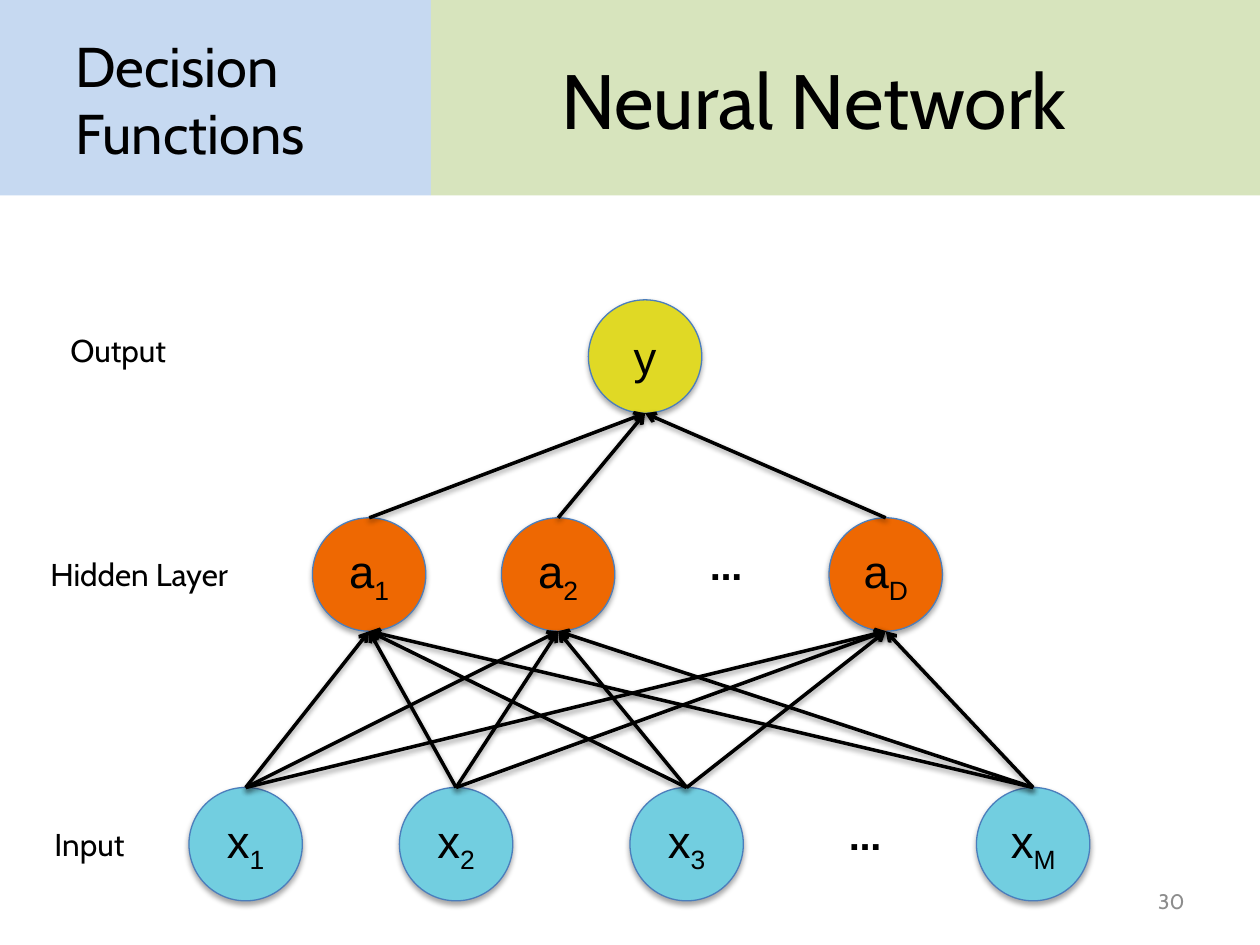
from lxml.etree import SubElement
from pptx import Presentation
from pptx.dml.color import RGBColor
from pptx.enum.shapes import MSO_CONNECTOR as Line, MSO_SHAPE as Shape
from pptx.enum.text import MSO_ANCHOR as Anchor, PP_ALIGN as Align
from pptx.oxml.ns import qn
from pptx.util import Inches, Pt

# The slide is a grid of 100 columns by 75 rows
WIDE, HIGH = 100, 75
UNIT = Inches(0.1)
NODE = 9
BLACK = "000000"


def grid(*nums):
    return [round(n * UNIT) for n in nums]


def color(code):
    return RGBColor.from_string(code)


def paint(shape, code):
    shape.fill.solid()
    shape.fill.fore_color.rgb = color(code)


def style(para, size, font="Cabin", code=BLACK, align=Align.LEFT, bold=False):
    para.alignment = align
    para.font.name, para.font.size = font, Pt(size)
    para.font.color.rgb = color(code)
    para.font.bold = bold


def shade(shape, alpha, dist):
    """Cast a soft shadow straight down."""
    props = shape._element.spPr
    list_ = SubElement(props, qn("a:effectLst"))
    outer = SubElement(list_, qn("a:outerShdw"), blurRad="40000",
                       dist=str(dist), dir="5400000", rotWithShape="0")
    tint = SubElement(outer, qn("a:srgbClr"), val=BLACK)
    SubElement(tint, qn("a:alpha"), val=str(alpha * 1000))


def write(slide, box, text, size, anchor=Anchor.MIDDLE, **look):
    frame = slide.shapes.add_textbox(*grid(*box)).text_frame
    frame.word_wrap = True
    frame.vertical_anchor = anchor
    para = frame.paragraphs[0]
    para.text = text
    style(para, size, **look)


def band(slide, box, code):
    shape = slide.shapes.add_shape(Shape.RECTANGLE, *grid(*box))
    shape.shadow.inherit = False
    paint(shape, code)
    shape.line.fill.background()


def header(slide, box):
    x, y, w, h = box
    split, edge, pad = 34.2, 5, 1.6
    band(slide, (x, y, split, h), "C6D9F1")
    band(slide, (x + split, y, w - split, h), "D7E4BD")
    deep = h - 3
    write(slide, (x + split, y + pad, w - split - edge, deep),
          "Neural Network", 44, align=Align.CENTER)
    write(slide, (x + edge, y + pad, split - edge, deep),
          "Decision Functions", 32)


def node(slide, mid, top, name, sub, code):
    shape = slide.shapes.add_shape(
        Shape.FLOWCHART_CONNECTOR, *grid(mid - NODE / 2, top, NODE, NODE))
    paint(shape, code)
    shape.line.color.rgb = color("4B7EBC")
    shape.line.width = Pt(0.75)
    shade(shape, 35, 23000)
    frame = shape.text_frame
    frame.word_wrap = False
    frame.vertical_anchor = Anchor.MIDDLE
    para = frame.paragraphs[0]
    para.add_run().text = name
    if sub:
        run = para.add_run()
        run.text = sub
        run.font._element.set("baseline", "-25000")
    style(para, 26, font="Arial", align=Align.CENTER)


def arrow(slide, tip, tail):
    link = slide.shapes.add_connector(Line.STRAIGHT, *grid(*tip, *tail))
    link.line.color.rgb = color(BLACK)
    link.line.width = Pt(2)
    SubElement(link.line._get_or_add_ln(), qn("a:headEnd"), type="arrow")
    shade(link, 38, 20000)


def network(slide, box):
    x, y, w, h = box
    # Layers: top row, fill, letter, node centres by subscript, gap centre
    layers = [
        (8.3, "E0D925", "y", {"": 51.2}, None),
        (25.6, "EE6802", "a", {"1": 29.3, "2": 44.3, "D": 70.3}, 57.7),
        (47, "72CEE0", "x",
         {"1": 19.5, "2": 36.2, "3": 54.5, "M": 82}, 68.7),
    ]
    for top, code, name, mids, gap in layers:
        for sub, mid in mids.items():
            node(slide, x + mid, y + top, name, sub, code)
        if gap:
            write(slide, (x + gap - 2.9, y + top + 0.85, 5.8, 5.4),
                  "…", 26, align=Align.CENTER, bold=True)

    # Every node feeds every node of the layer above
    for upper, lower in zip(layers, layers[1:]):
        for tip in upper[3].values():
            for tail in lower[3].values():
                arrow(slide, (x + tip, y + upper[0] + NODE),
                      (x + tail, y + lower[0]))

    # Layer names
    for text, left, top, wide, align in [
        ("Output", 4.6, 10.3, 14.2, Align.LEFT),
        ("Hidden Layer", -0.2, 28.1, 22.5, Align.CENTER),
        ("Input", 0, 49.5, 14.2, Align.CENTER),
    ]:
        write(slide, (x + left, y + top, wide, 4), text, 18,
              anchor=Anchor.TOP, align=align)


def footer(slide, box):
    write(slide, box, "30", 12, code="8C8C8C", align=Align.RIGHT)


def main():
    deck = Presentation()
    deck.slide_width, deck.slide_height = grid(WIDE, HIGH)
    slide = deck.slides.add_slide(deck.slide_layouts[6])
    top = 15.5
    header(slide, (0, 0, WIDE, top))
    footer(slide, (71.7, 69.5, 23.3, 4))
    network(slide, (0, top, WIDE, HIGH - top))
    deck.save("out.pptx")


if __name__ == "__main__":
    main()
